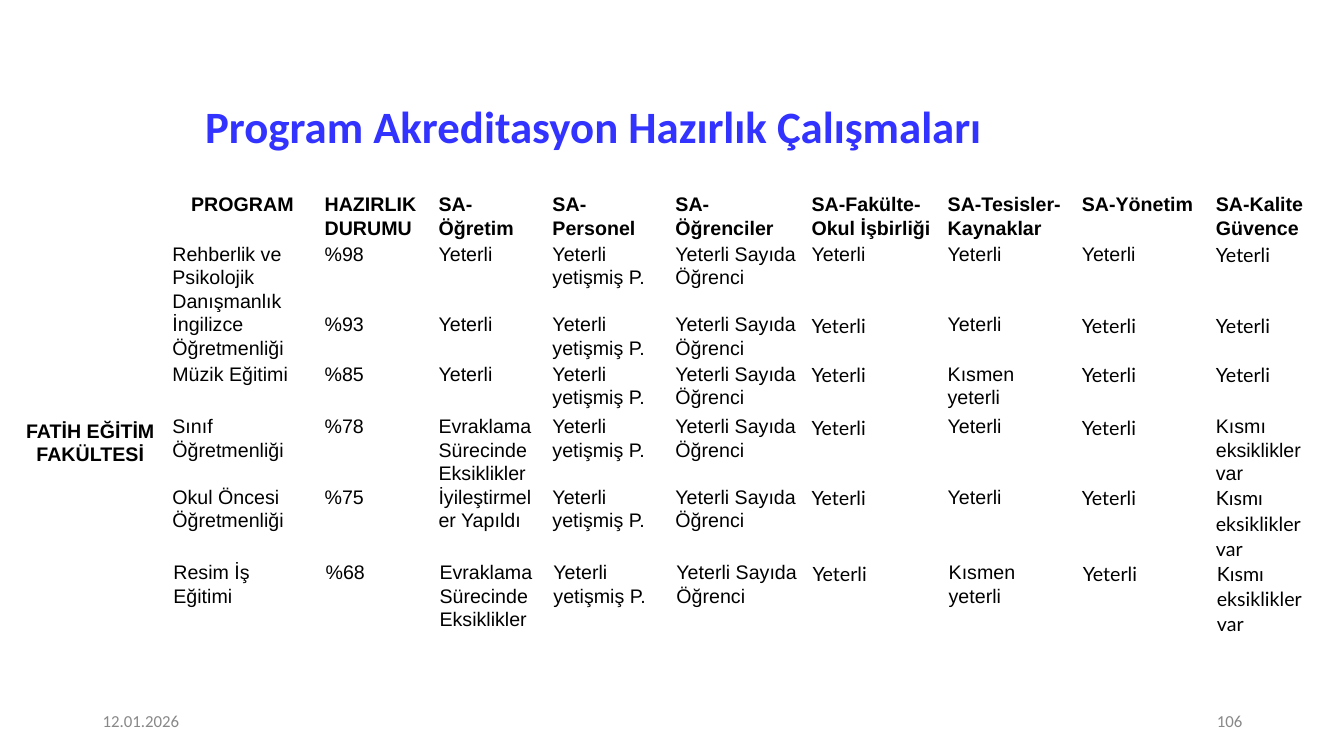
"""Build the slide on programme accreditation readiness."""
from pptx import Presentation
from pptx.dml.color import RGBColor
from pptx.enum.text import MSO_ANCHOR, PP_ALIGN
from pptx.util import Inches, Pt

MIDDLE, TOP = MSO_ANCHOR.MIDDLE, MSO_ANCHOR.TOP
LEFT, CENTER, RIGHT = PP_ALIGN.LEFT, PP_ALIGN.CENTER, PP_ALIGN.RIGHT


def color(code):
    return RGBColor.from_string(code)


def write(frame, text, font, size, code, bold=False, align=LEFT, space=1.0):
    para = frame.paragraphs[0]
    para.alignment = align
    para.line_spacing = space
    run = para.add_run()
    run.text = text
    run.font.name = font
    run.font.size = Pt(size)
    run.font.bold = bold
    run.font.color.rgb = color(code)


deck = Presentation()
deck.slide_width, deck.slide_height = Inches(13.33), Inches(7.5)
slide = deck.slides.add_slide(deck.slide_layouts[5])

title = slide.shapes.title
title.left, title.top = Inches(0.24), Inches(0.87)
title.width, title.height = Inches(11.4), Inches(0.82)
title.text_frame.vertical_anchor = MIDDLE
write(title.text_frame, "Program Akreditasyon Hazırlık Çalışmaları ",
      "Calibri", 32, "3333FF", True, CENTER, 0.9)

faculty = "FATİH EĞİTİM FAKÜLTESİ"
heads = ["PROGRAM", "HAZIRLIK DURUMU", "SA-Öğretim", "SA-Personel",
         "SA-Öğrenciler", "SA-Fakülte-Okul İşbirliği",
         "SA-Tesisler-Kaynaklar", "SA-Yönetim", "SA-Kalite Güvence"]
good, partly, gaps = "Yeterli", "Kısmen yeterli", "Kısmı eksiklikler var"
papers = "Evraklama Sürecinde Eksiklikler"
programs = [
    ("Rehberlik ve Psikolojik Danışmanlık", "%98", good, good, good),
    ("İngilizce Öğretmenliği", "%93", good, good, good),
    ("Müzik Eğitimi", "%85", good, partly, good),
    ("Sınıf Öğretmenliği", "%78", papers, good, gaps),
    ("Okul Öncesi Öğretmenliği", "%75", "İyileştirmeler Yapıldı", good, gaps),
    ("Resim İş Eğitimi", "%68", papers, partly, gaps),
]
rows = [heads]
for name, ready, teaching, rooms, quality in programs:
    rows.append([name, ready, teaching, "Yeterli yetişmiş P.",
                 "Yeterli Sayıda Öğrenci", good, rooms, good, quality])

widths = [1.51, 1.51, 1.13, 1.13, 1.22, 1.35, 1.35, 1.33, 1.33, 1.02]
heights = [0.49, 0.63, 0.49, 0.52, 0.63, 0.63, 1.31]
table = slide.shapes.add_table(
    len(heights), len(widths), Inches(0.14), Inches(1.91),
    Inches(sum(widths)), Inches(sum(heights))).table
for column, width in zip(table.columns, widths):
    column.width = Inches(width)
for line, height in zip(table.rows, heights):
    line.height = Inches(height)

lato_cols = {6, 8, 9}
arial_spots = {(1, 6), (1, 8), (4, 9)}
last = len(rows) - 1
for r, texts in enumerate(rows):
    for c, text in enumerate([faculty if r == 0 else ""] + texts):
        cell = table.cell(r, c)
        cell.fill.solid()
        cell.fill.fore_color.rgb = color("FFFFFF")
        cell.margin_left = cell.margin_right = Inches(0.07 if r == last else 0.06)
        cell.margin_top = cell.margin_bottom = 0
        cell.vertical_anchor = MIDDLE if c == 0 else TOP
        if text:
            lato = r > 0 and c in lato_cols and (r, c) not in arial_spots
            write(cell.text_frame, text, "Lato" if lato else "Arial", 14,
                  "000000", r == 0, CENTER if r == 0 and c < 2 else LEFT, 1.07)
table.cell(0, 0).merge(table.cell(last, 0))

for text, left, align in [("12.01.2026", 0.92, LEFT), ("106", 9.42, RIGHT)]:
    box = slide.shapes.add_textbox(Inches(left), Inches(6.95), Inches(3), Inches(0.4))
    box.text_frame.word_wrap = True
    box.text_frame.vertical_anchor = MIDDLE
    write(box.text_frame, text, "Calibri", 12, "888888", align=align)

deck.save("out.pptx")
